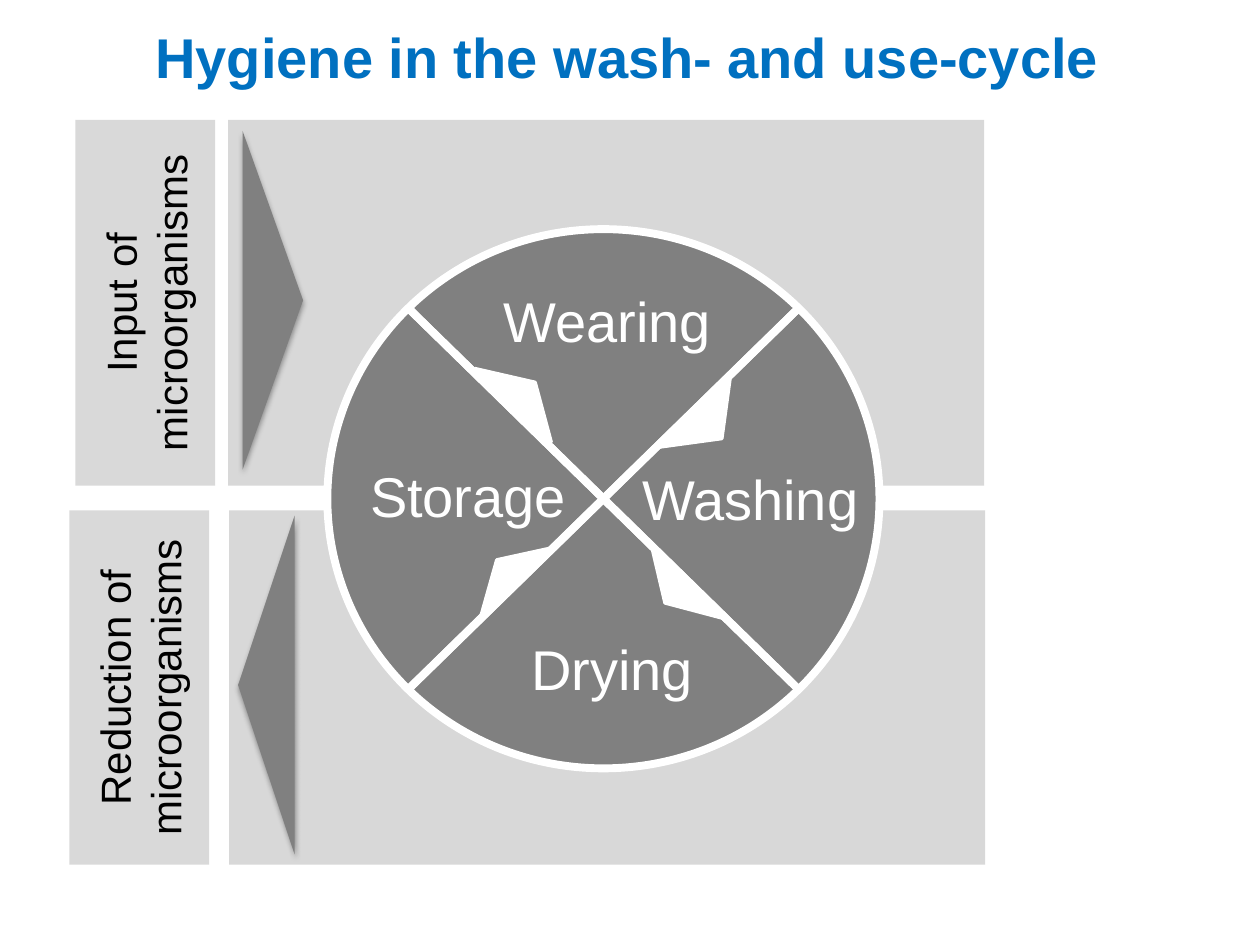
import math

import pptx
import pptx.dml.color
import pptx.enum.shapes
import pptx.enum.text
import pptx.oxml
import pptx.oxml.ns
import pptx.util

Cm, Pt = pptx.util.Cm, pptx.util.Pt
RGBColor = pptx.dml.color.RGBColor
SHAPE = pptx.enum.shapes.MSO_SHAPE
CENTER = pptx.enum.text.PP_ALIGN.CENTER

BLUE = RGBColor(0x00, 0x70, 0xC0)
BLACK = RGBColor(0x00, 0x00, 0x00)
WHITE = RGBColor(0xFF, 0xFF, 0xFF)
GRAY = RGBColor(0x80, 0x80, 0x80)
BAND_GRAY = RGBColor(0xD8, 0xD8, 0xD8)
LABEL_GRAY = RGBColor(0xD9, 0xD9, 0xD9)

SHADOW = (
    f'<a:effectLst {pptx.oxml.ns.nsdecls("a")}>'
    '<a:outerShdw blurRad="39370" dist="22860" dir="5400000" rotWithShape="0">'
    '<a:srgbClr val="000000"><a:alpha val="35000"/></a:srgbClr>'
    '</a:outerShdw></a:effectLst>'
)
NO_EFFECTS = f'<a:effectLst {pptx.oxml.ns.nsdecls("a")}/>'


def add_filled(slide, kind, left, top, width, height, color, line=None, rotation=0):
    shape = slide.shapes.add_shape(kind, Cm(left), Cm(top), Cm(width), Cm(height))
    shape.shadow.inherit = False
    shape.fill.solid()
    shape.fill.fore_color.rgb = color
    if line:
        shape.line.color.rgb = WHITE
        shape.line.width = Pt(line)
    else:
        shape.line.fill.background()
    shape.rotation = rotation
    return shape


def set_text(paragraph, text, size, color, bold=False):
    paragraph.text = text
    paragraph.font.name = "Arial"
    paragraph.font.size = Pt(size)
    paragraph.font.color.rgb = color
    paragraph.font.bold = bold


def add_title(slide, left, top, width, height):
    title = slide.shapes.add_textbox(Cm(left), Cm(top), Cm(width), Cm(height))
    frame = title.text_frame
    frame.word_wrap = True
    frame.margin_left = frame.margin_right = frame.margin_top = frame.margin_bottom = 0
    heading = frame.paragraphs[0]
    set_text(heading, "Hygiene in the wash- and use-cycle", 32, BLUE, bold=True)
    heading.alignment = CENTER
    heading.line_spacing = Pt(36.3)


def add_band(slide, left, top, width, height):
    add_filled(slide, SHAPE.RECTANGLE, left, top, width, height, BAND_GRAY)


def add_label(slide, text, left, top, width, height):
    label = add_filled(slide, SHAPE.RECTANGLE, left, top, width, height, LABEL_GRAY)
    label.element.txBody.bodyPr.set("vert", "vert270")
    label.text_frame.word_wrap = True
    label.text_frame.vertical_anchor = pptx.enum.text.MSO_ANCHOR.MIDDLE
    caption = label.text_frame.paragraphs[0]
    set_text(caption, text, 24, BLACK)
    caption.alignment = CENTER


def add_flow_arrow(slide, center_x, center_y, length, depth, rotation):
    arrow = add_filled(slide, SHAPE.ISOSCELES_TRIANGLE, center_x - length / 2,
                       center_y - depth / 2, length, depth, GRAY, rotation=rotation)
    properties = arrow.element.spPr
    properties.remove(properties.find(pptx.oxml.ns.qn("a:effectLst")))
    properties.append(pptx.oxml.parse_xml(SHADOW))


def add_cycle(slide, left, top, width, height):
    add_filled(slide, SHAPE.FLOWCHART_SUMMING_JUNCTION, left, top, width, height,
               GRAY, line=4.5)

    # Stage names
    for stage, x, y, stage_width in (
        ("Wearing", 3.3, 1.04, 4.72),
        ("Drying", 3.86, 8.05, 3.81),
        ("Washing", 6.1, 4.62, 4.9),
        ("Storage", 0.61, 4.55, 4.5),
    ):
        name = slide.shapes.add_textbox(Cm(left + x), Cm(top + y), Cm(stage_width), Cm(1.63))
        name.text_frame.word_wrap = False
        name.text_frame.auto_size = pptx.enum.text.MSO_AUTO_SIZE.SHAPE_TO_FIT_TEXT
        set_text(name.text_frame.paragraphs[0], stage, 32, WHITE)

    # Direction markers on the dividers
    for x, y, depth, rotation in (
        (6.6, 3.53, 0.81, 135),
        (5.97, 6.99, 0.64, 225.8),
        (2.57, 6.58, 0.64, 316.7),
        (2.9, 3, 0.64, 43.9),
    ):
        add_filled(slide, SHAPE.ISOSCELES_TRIANGLE, left + x, top + y, 2.13, depth,
                   WHITE, line=2, rotation=rotation)

    # Dividers end on the rim at 45 degrees
    inset = (1 - math.sqrt(0.5)) / 2
    west, east = left + width * inset, left + width * (1 - inset)
    north, south = top + height * inset, top + height * (1 - inset)
    for start, end in ((west, east), (east, west)):
        divider = slide.shapes.add_connector(
            pptx.enum.shapes.MSO_CONNECTOR.STRAIGHT,
            Cm(start), Cm(south), Cm(end), Cm(north))
        divider.line.color.rgb = WHITE
        divider.line.width = Pt(4.5)
        divider.element.spPr.append(pptx.oxml.parse_xml(NO_EFFECTS))


def main():
    deck = pptx.Presentation()
    deck.slide_width, deck.slide_height = Cm(25.4), Cm(19.05)
    slide = deck.slides.add_slide(deck.slide_layouts[6])

    # label, label left, band left, top, height, arrow center x, arrow depth, rotation
    flows = (
        ("Input of microorganisms", 1.52, 4.6, 2.42, 7.37, 5.5, 1.22, 90),
        ("Reduction of microorganisms", 1.4, 4.62, 10.29, 7.14, 5.37, 1.14, 270),
    )
    for text, label_left, band_left, top, height, *_ in flows:
        add_band(slide, band_left, top, 15.24, height)
        add_label(slide, text, label_left, top, 2.82, height)
    add_cycle(slide, 6.6, 4.62, 11.13, 10.87)
    for _, _, _, top, height, center_x, depth, rotation in flows:
        add_flow_arrow(slide, center_x, top + height / 2 - 0.05, 6.83, depth, rotation)
    add_title(slide, 0, 0.53, 25.3, 1.78)

    deck.save("out.pptx")


if __name__ == "__main__":
    main()
